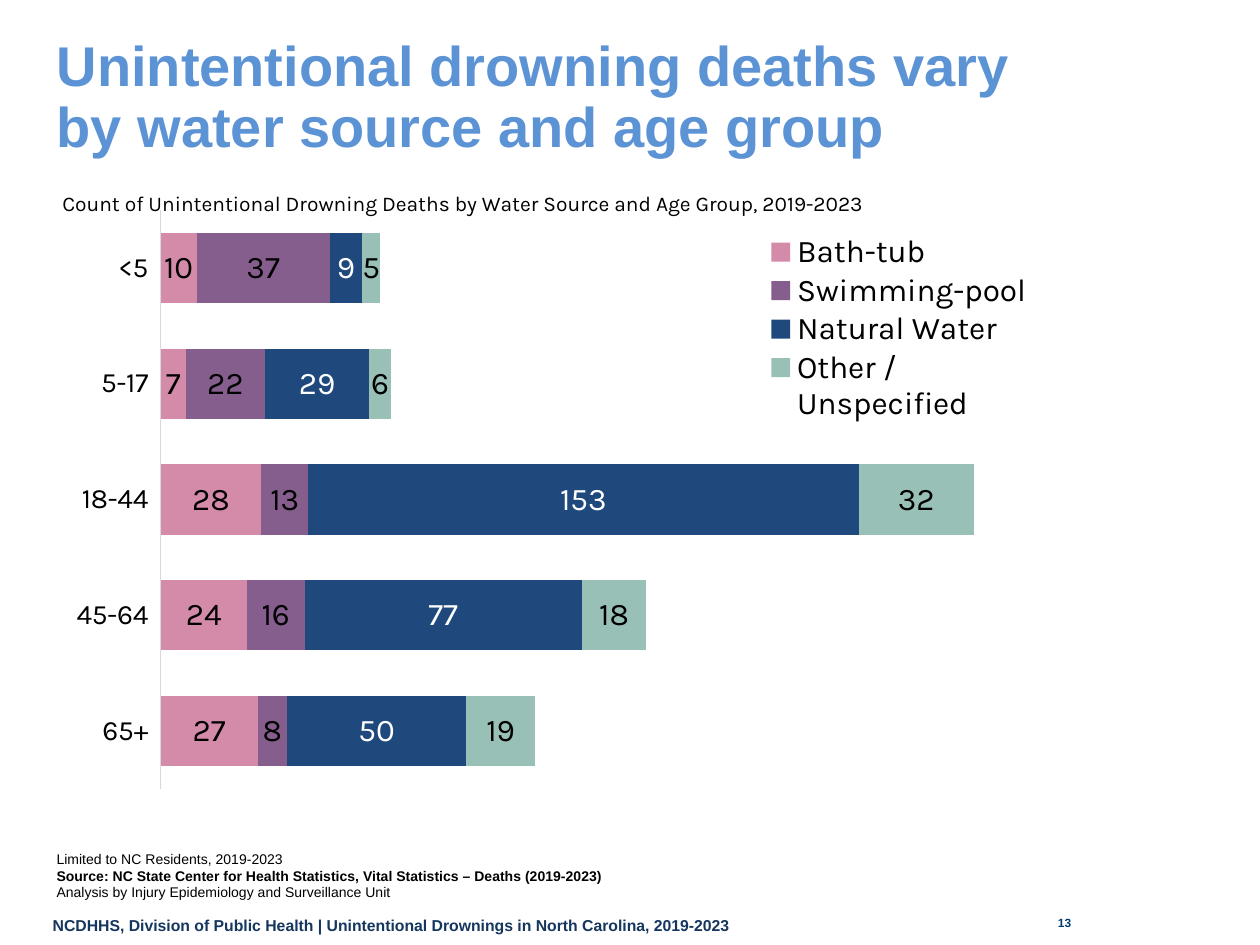
from pptx import Presentation
from pptx.chart.data import CategoryChartData
from pptx.dml.color import RGBColor
from pptx.enum.chart import (XL_CHART_TYPE, XL_LABEL_POSITION,
                             XL_LEGEND_POSITION, XL_TICK_LABEL_POSITION, XL_TICK_MARK)
from pptx.enum.text import MSO_ANCHOR, MSO_AUTO_SIZE, PP_ALIGN
from pptx.oxml import parse_xml
from pptx.oxml.ns import nsdecls, qn
from pptx.util import Inches, Pt

SKY = RGBColor(0x5C, 0x93, 0xD5)
NAVY = RGBColor(0x15, 0x36, 0x5E)
DEEP = RGBColor(0x00, 0x3B, 0x70)
BLACK = RGBColor(0x00, 0x00, 0x00)
WHITE = RGBColor(0xFF, 0xFF, 0xFF)
GRAY = RGBColor(0xD9, 0xD9, 0xD9)
PINK = RGBColor(0xD4, 0x8A, 0xA9)
PLUM = RGBColor(0x85, 0x5E, 0x8D)
BLUE = RGBColor(0x1F, 0x49, 0x7D)
SAGE = RGBColor(0x98, 0xC0, 0xB6)


def style(font, size, color, name="Arial", bold=False):
    form = {"size": Pt(size), "name": name, "bold": bold}
    for key, value in form.items():
        setattr(font, key, value)
    font.color.rgb = color


def place(part, index, target, **spots):
    """Give a chart part a manual layout, as fractions of the chart."""
    for old in part.findall(qn("c:layout")):
        part.remove(old)
    inner = '<c:layoutTarget val="inner"/>' if target else ""
    modes = "".join(f'<c:{key}Mode val="edge"/>' for key in "xy")
    sizes = "".join(f'<c:{key} val="{val}"/>' for key, val in spots.items())
    part.insert(index, parse_xml(
        f'<c:layout {nsdecls("c")}><c:manualLayout>{inner}{modes}{sizes}'
        '</c:manualLayout></c:layout>'))


prs = Presentation()
prs.slide_width, prs.slide_height = Inches(10), Inches(7.5)
slide = prs.slides.add_slide(prs.slide_layouts[5])

# Title
title = slide.shapes.title
title.left, title.top = Inches(0.35), Inches(0.29)
title.width, title.height = Inches(8.24), Inches(0.99)
frame = title.text_frame
frame.text = "Unintentional drowning deaths vary by water source and age group"
frame.auto_size = MSO_AUTO_SIZE.NONE
frame.vertical_anchor = MSO_ANCHOR.MIDDLE
head = frame.paragraphs[0]
head.alignment, head.line_spacing = PP_ALIGN.LEFT, 0.9
style(head.runs[0].font, 32, SKY, bold=True)

# Footer, page number and source notes
LEFT, RIGHT = PP_ALIGN.LEFT, PP_ALIGN.RIGHT
texts = [
    ((0.32, 7.22, 8.74, 0.29), 9, NAVY, LEFT,
     [("NCDHHS, Division of Public Health | Unintentional Drownings "
       "in North Carolina, 2019-2023", True)]),
    ((7.98, 7.22, 0.62, 0.31), 6.8, DEEP, RIGHT, [("13", True)]),
    ((0.35, 6.7, 9.08, 0.5), 8, BLACK, LEFT,
     [("Limited to NC Residents, 2019-2023", False),
      ("Source: NC State Center for Health Statistics, "
       "Vital Statistics – Deaths (2019-2023)", True),
      ("Analysis by Injury Epidemiology and Surveillance Unit", False)]),
]
for spot, size, color, align, lines in texts:
    frame = slide.shapes.add_textbox(*map(Inches, spot)).text_frame
    frame.word_wrap = True
    for row, (text, bold) in enumerate(lines):
        para = frame.add_paragraph() if row else frame.paragraphs[0]
        para.alignment = align
        run = para.add_run()
        run.text = text
        style(run.font, size, color, bold=bold)

# Chart data
series = [
    ("Bath-tub", (10, 7, 28, 24, 27), PINK, BLACK),
    ("Swimming-pool", (37, 22, 13, 16, 8), PLUM, BLACK),
    ("Natural Water", (9, 29, 153, 77, 50), BLUE, WHITE),
    ("Other / Unspecified", (5, 6, 32, 18, 19), SAGE, BLACK),
]
data = CategoryChartData()
data.categories = ["<5", "5-17", "18-44", "45-64", "65+"]
for name, counts, *_ in series:
    data.add_series(name, counts)
chart = slide.shapes.add_chart(
    XL_CHART_TYPE.BAR_STACKED, Inches(0.43), Inches(1.42),
    Inches(8.54), Inches(5.27), data).chart
style(chart.font, 10, BLACK)

# Bars and labels
plot = chart.plots[0]
plot.gap_width, plot.overlap, plot.vary_by_categories = 65, 100, False
for bar, (_, _, fill, ink) in zip(plot.series, series):
    bar.format.fill.solid()
    bar.format.fill.fore_color.rgb = fill
    labels = bar.data_labels
    labels.show_value = True
    labels.position = XL_LABEL_POSITION.CENTER
    style(labels.font, 18, ink, "Karla")

# Axes
ages = chart.category_axis
ages.reverse_order = True
ages.major_tick_mark = ages.minor_tick_mark = XL_TICK_MARK.NONE
ages.tick_label_position = XL_TICK_LABEL_POSITION.LOW
ages.format.line.color.rgb = GRAY
ages.format.line.width = Pt(0.75)
style(ages.tick_labels.font, 16, BLACK, "Karla")
axis = chart.value_axis
axis.minimum_scale, axis.maximum_scale = 0, 250
axis.has_major_gridlines = axis.visible = False

# Chart title and legend
chart.has_title = True
label = chart.chart_title
label.include_in_layout = False
label.text_frame.text = ("Count of Unintentional Drowning Deaths by Water Source "
                         "and Age Group, 2019-2023")
para = label.text_frame.paragraphs[0]
para.alignment = LEFT
style(para.runs[0].font, 12, BLACK, "Karla")
chart.has_legend = True
legend = chart.legend
legend.position = XL_LEGEND_POSITION.RIGHT
legend.include_in_layout = False
style(legend.font, 18, BLACK, "Karla")

# Layout inside the chart
area = chart._chartSpace.chart.plotArea
place(area, 0, True, x=0.099, y=0.047, w=0.836, h=0.872)
place(label._element, 1, False, x=0.004, y=0.01)
place(legend._element, 1, False, x=0.65, y=0.08, w=0.27, h=0.29)

prs.save("out.pptx")
